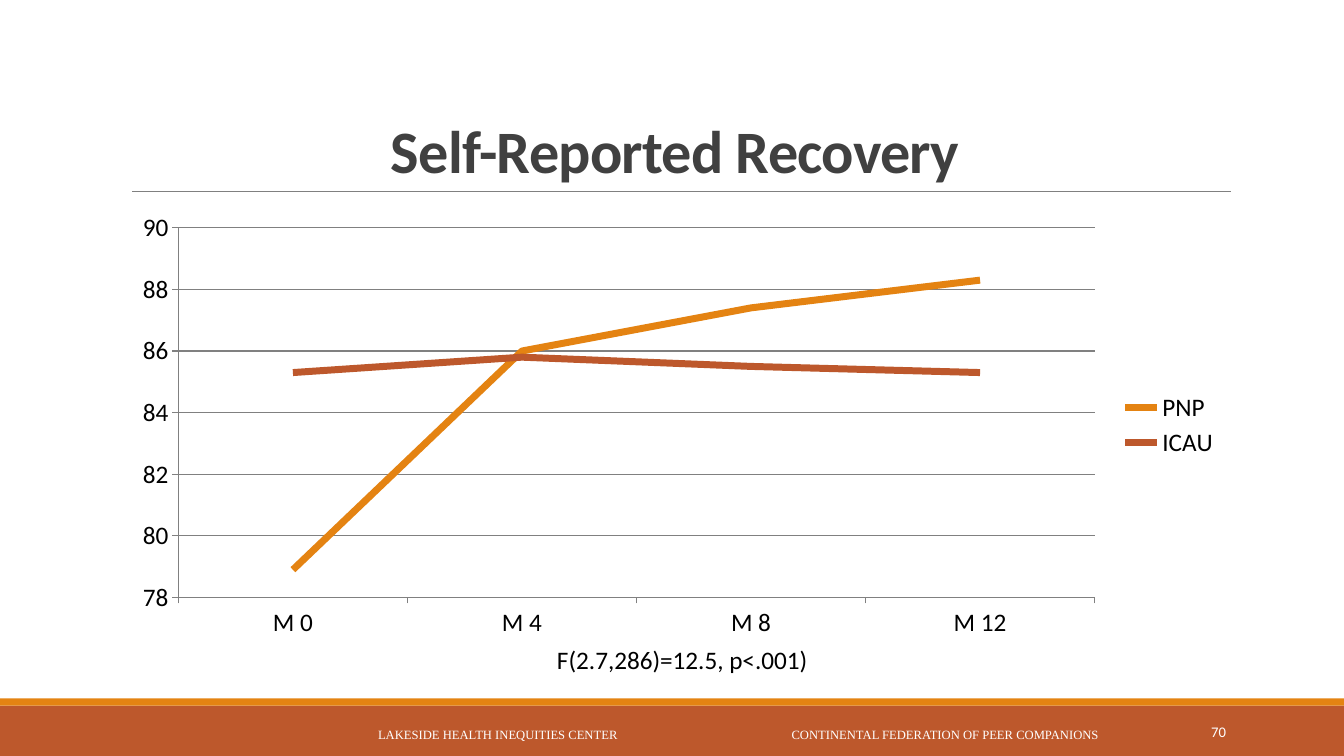
from lxml import etree
from pptx import Presentation
from pptx import util as u
from pptx.chart.data import CategoryChartData
from pptx.dml.color import RGBColor
from pptx.enum import chart as charts, shapes, text
from pptx.oxml.ns import qn

PX = 9525
WIDTH, HEIGHT = 1280, 720
ORANGE, RUST, GRAY, WHITE, BLACK = "E48312", "BD582C", "808080", "FFFFFF", "000000"
LEFT, CENTER, RIGHT = text.PP_ALIGN.LEFT, text.PP_ALIGN.CENTER, text.PP_ALIGN.RIGHT


def px(*lengths):
    """Turn pixel lengths into EMU."""
    return [u.Emu(length * PX) for length in lengths]


def color(value):
    """Turn a hex string into a colour."""
    return RGBColor.from_string(value)


def write(frame, words, size, ink, align=LEFT, face="Calibri", anchor=text.MSO_ANCHOR.MIDDLE):
    """Write one formatted run into a text frame and return its paragraph and run."""
    frame.word_wrap = True
    frame.auto_size = text.MSO_AUTO_SIZE.NONE
    frame.vertical_anchor = anchor
    para = frame.paragraphs[0]
    para.alignment = align
    span = para.add_run()
    span.text = words
    span.font.size, span.font.name = u.Pt(size), face
    span.font.color.rgb = color(ink)
    return para, span


def add_label(page, box, words, size, ink, **style):
    """Place a text box with one line of text."""
    label = page.shapes.add_textbox(*px(*box))
    write(label.text_frame, words, size, ink, **style)


def add_bar(page, box, fill):
    """Place a plain filled rectangle."""
    bar = page.shapes.add_shape(shapes.MSO_SHAPE.RECTANGLE, *px(*box))
    bar.shadow.inherit = False
    bar.fill.solid()
    bar.fill.fore_color.rgb = color(fill)
    bar.line.fill.background()


def add_heading(page, box):
    """Set the title and the rule beneath it."""
    left, top, width, height = box
    title = page.shapes.title
    title.left, title.top, title.width, title.height = px(*box)
    para, span = write(title.text_frame, "Self-Reported Recovery", 43, "404040",
                       align=CENTER, anchor=text.MSO_ANCHOR.BOTTOM)
    para.line_spacing = 0.85
    span.font.bold = True
    span.font._element.set("spc", "-50")
    bottom = top + height
    rule = page.shapes.add_connector(
        shapes.MSO_CONNECTOR.STRAIGHT, *px(left + 11, bottom, left + width + 1, bottom))
    rule.line.color.rgb = color(GRAY)
    rule.line.width = u.Pt(0.5)
    etree.SubElement(rule._element.spPr, qn("a:effectLst"))


def add_recovery_chart(page, box):
    """Place the recovery line chart with its test result below."""
    left, top, width, height = box
    data = CategoryChartData(number_format="General")
    data.categories = ["M 0", "M 4", "M 8", "M 12"]
    data.add_series("PNP", [78.9, 86, 87.4, 88.3])
    data.add_series("ICAU", [85.3, 85.8, 85.5, 85.3])
    chart = page.shapes.add_chart(charts.XL_CHART_TYPE.LINE, *px(*box), data).chart
    chart.has_title = False
    chart.font.size, chart.font.name = u.Pt(18), "Calibri"
    chart.font.color.rgb = color(BLACK)
    chart.has_legend = True
    chart.legend.position = charts.XL_LEGEND_POSITION.RIGHT
    chart.legend.include_in_layout = False
    chart.plots[0].vary_by_categories = False
    for series, ink in zip(chart.plots[0].series, (ORANGE, RUST)):
        series.smooth = False
        series.marker.style = charts.XL_MARKER_STYLE.NONE
        series.format.line.color.rgb = color(ink)
        series.format.line.width = u.Pt(5)
    scale = chart.value_axis
    scale.minimum_scale, scale.maximum_scale, scale.major_unit = 78, 90, 2
    scale.has_major_gridlines = True
    for part in (scale, scale.major_gridlines, chart.category_axis):
        part.format.line.color.rgb = color(GRAY)
        part.format.line.width = u.Pt(0.75)
    for axis in (scale, chart.category_axis):
        axis.major_tick_mark = charts.XL_TICK_MARK.OUTSIDE
    add_label(page, (left + 406, top + height - 7, 339, 38), "F(2.7,286)=12.5, p<.001)",
              18, BLACK, anchor=text.MSO_ANCHOR.TOP)


def add_footer(page, box):
    """Place the footer bands, the two organisations and the page number."""
    left, top, width, height = box
    add_bar(page, (left, top, width, height), RUST)
    add_bar(page, (left, top - 7, width, 7), ORANGE)
    for offset, span_width, name in (
            (324, 300, "LAKESIDE HEALTH INEQUITIES CENTER"),
            (710, 380, "CONTINENTAL FEDERATION OF PEER COMPANIONS")):
        add_label(page, (left + offset, top + 6, span_width, 42), name, 9, WHITE,
                  align=CENTER, face="Times New Roman")
    add_label(page, (left + 1040, top + 6, 137, 38), "70", 10.5, WHITE, align=RIGHT)


def main():
    """Build the slide and save the deck."""
    deck = Presentation()
    deck.slide_width, deck.slide_height = px(WIDTH, HEIGHT)
    page = deck.slides.add_slide(deck.slide_layouts[5])
    add_footer(page, (0, 672, WIDTH, 48))
    add_heading(page, (115, 30, 1056, 152))
    add_recovery_chart(page, (115, 194, 1056, 422))
    deck.save("out.pptx")


if __name__ == "__main__":
    main()
